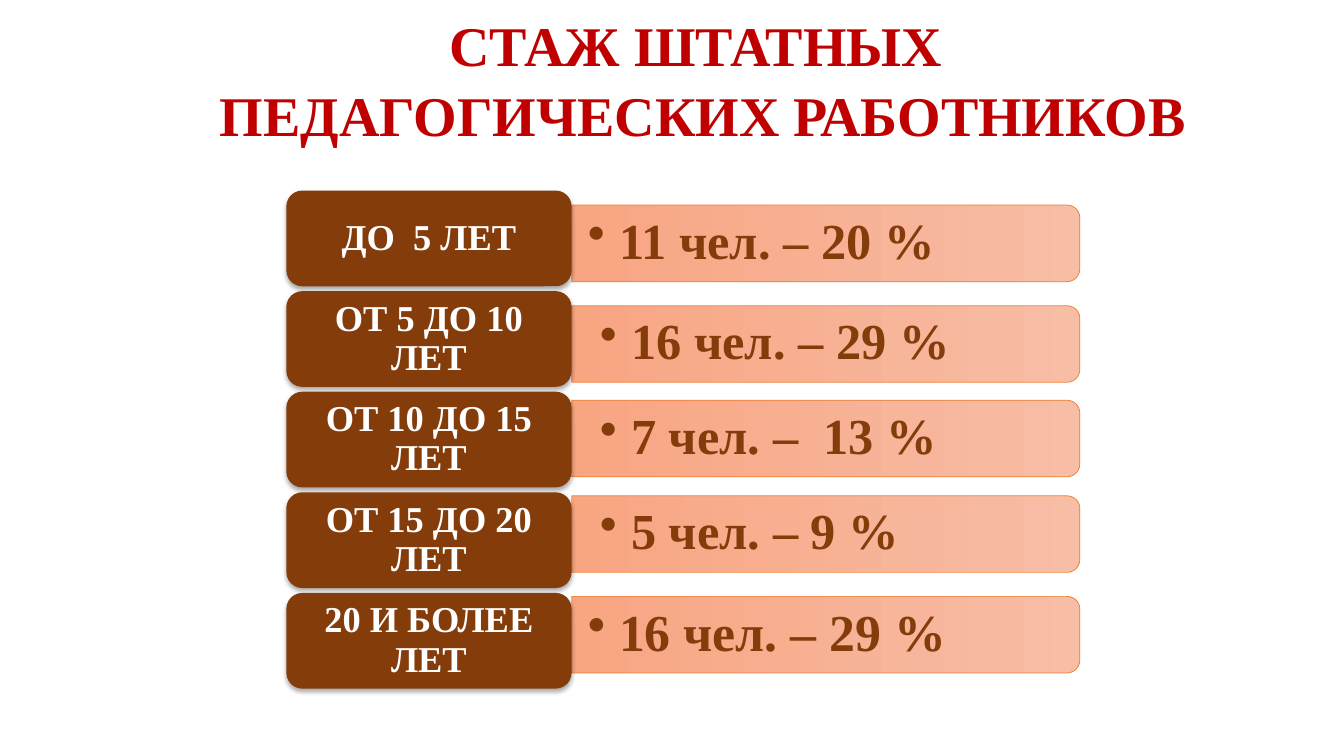
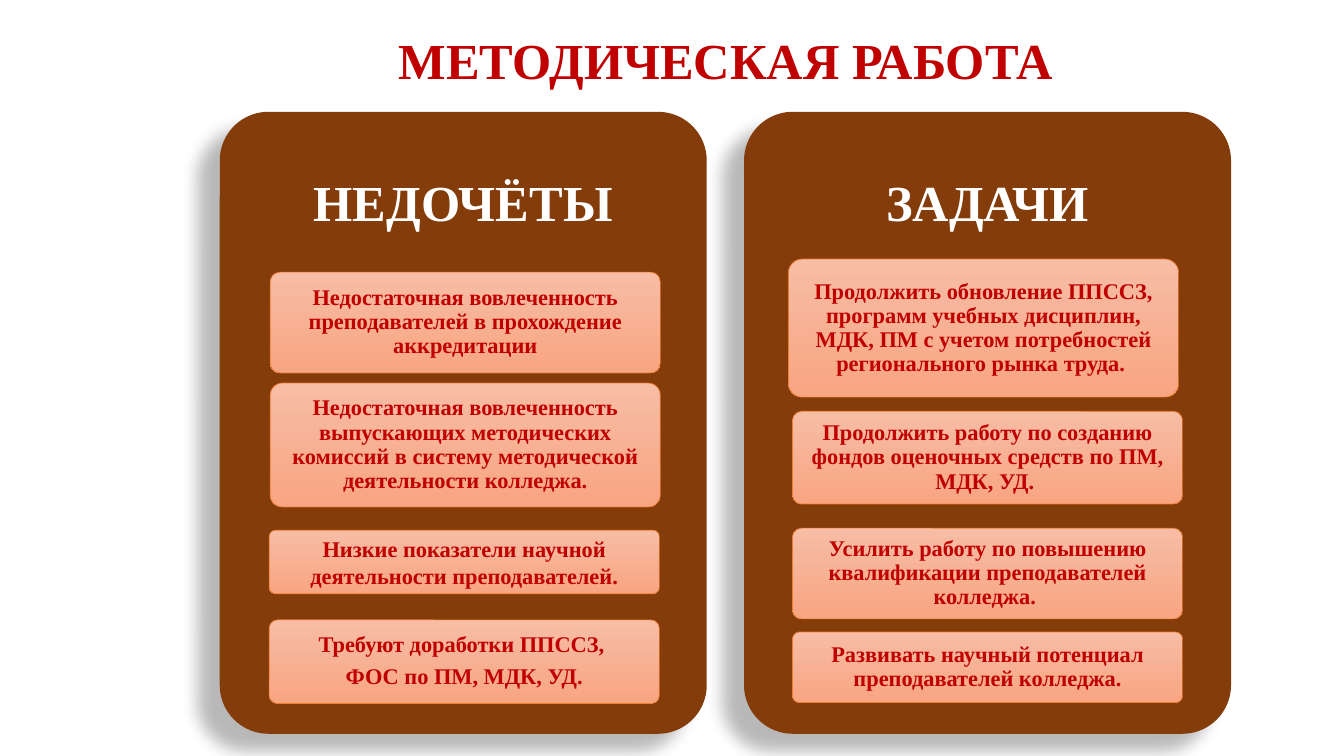
from dataclasses import dataclass
from typing import NamedTuple

from lxml.etree import SubElement
from pptx import Presentation
from pptx.dml.color import RGBColor
from pptx.enum.shapes import MSO_SHAPE
from pptx.enum.text import MSO_ANCHOR, MSO_AUTO_SIZE, PP_ALIGN
from pptx.oxml.ns import qn
from pptx.util import Inches, Pt

# Shared style
FONT = "Times New Roman"
RED, BROWN, WHITE = "C00000", "843C0B", "FFFFFF"
PALE, PEACH, EDGE = "F7BDA5", "F8A582", "ED7D31"


class Box(NamedTuple):
    """Place on a grid with ten cells to the inch."""
    col: float
    row: float
    cols: float
    rows: float


class Shade(NamedTuple):
    alpha: int
    blur: float
    dist: float
    angle: int


@dataclass
class Term:
    label: str
    value: str
    shift: float  # bar centre relative to pill centre
    inset: float = 2.7
    size: int = 36


@dataclass
class Card:
    row: float
    rows: float
    text: str
    shift: float = 0
    lead: float = 0.9


@dataclass
class Panel:
    col: float
    head: str
    cards: list[Card]


def cell(count: float) -> int:
    return Inches(count / 10)


def tint(code: str) -> RGBColor:
    return RGBColor.from_string(code)


# Text
def write(frame, text: str, *, size: float, color: str, align=PP_ALIGN.CENTER,
          anchor=MSO_ANCHOR.MIDDLE, lead: float = 0.9, gap: float = 0,
          inset: tuple[float, float] = (1, 0.5), bullet: float = 0) -> None:
    frame.word_wrap = True
    frame.auto_size = MSO_AUTO_SIZE.NONE
    frame.vertical_anchor = anchor
    frame.margin_left = frame.margin_right = cell(inset[0])
    frame.margin_top = frame.margin_bottom = cell(inset[1])
    frame.text = text
    for num, par in enumerate(frame.paragraphs):
        if bullet:
            props = par._p.get_or_add_pPr()
            props.set("marL", str(cell(bullet)))
            props.set("indent", str(-cell(bullet)))
            SubElement(props, qn("a:buChar"), char="•")
        par.alignment = align
        par.line_spacing = lead
        par.space_before = Pt(gap if num else 0)
        for run in par.runs:
            font = run.font
            font.name, font.size, font.bold = FONT, Pt(size), True
            font.color.rgb = tint(color)


def label(slide, box: Box, text: str, **style) -> None:
    note = slide.shapes.add_textbox(*map(cell, box))
    write(note.text_frame, text, **style)


def title(slide, box: Box, text: str, **style) -> None:
    head = slide.shapes.title
    head.left, head.top, head.width, head.height = map(cell, box)
    write(head.text_frame, text, color=RED, **style)


# Shapes
def block(slide, kind, box: Box, curve: float | None = None):
    shape = slide.shapes.add_shape(kind, *map(cell, box))
    shape.shadow.inherit = False
    if curve is not None:
        shape.adjustments[0] = curve
    return shape


def solid(slide, box: Box, shade: Shade, curve: float | None = None):
    shape = block(slide, MSO_SHAPE.ROUNDED_RECTANGLE, box, curve)
    shape.fill.solid()
    shape.fill.fore_color.rgb = tint(BROWN)
    shape.line.fill.background()
    glow = SubElement(shape._element.spPr.find(qn("a:effectLst")), qn("a:outerShdw"),
                      blurRad=str(Pt(shade.blur)), dist=str(Pt(shade.dist)),
                      dir=str(shade.angle * 60000), algn="ctr", rotWithShape="0")
    dark = SubElement(glow, qn("a:srgbClr"), val="000000")
    SubElement(dark, qn("a:alpha"), val=str(shade.alpha * 1000))
    return shape


def blend(slide, kind, box: Box, curve: float | None = None):
    shape = block(slide, kind, box, curve)
    shape.fill.gradient()
    shape.fill.gradient_angle = 270
    for stop, code in zip(shape.fill.gradient_stops, (PALE, PEACH)):
        stop.color.rgb = tint(code)
    shape.line.color.rgb = tint(EDGE)
    shape.line.width = Pt(0.5)
    return shape


# Slide 1: length of service
TERMS = [
    Term("ДО  5 ЛЕТ", "11 чел. – 20 %", 0.5, inset=1.5),
    Term("ОТ 5 ДО 10 ЛЕТ", "16 чел. – 29 %", 0.5),
    Term("ОТ 10 ДО 15 ЛЕТ", "7 чел. –  13 %", -0.1),
    Term("ОТ 15 ДО 20 ЛЕТ", "5 чел. – 9 %", -0.6),
    Term("20 И БОЛЕЕ ЛЕТ", "16 чел. – 29 %", -0.6, inset=1.5, size=37),
]
PILL = Box(28.4, 18.9, 28.3, 9.5)
STEP, LONG, THICK = 9.98, 50.4, 7.6


def draw_term(slide, num: int, term: Term) -> None:
    pill = PILL._replace(row=PILL.row + num * STEP)
    left = pill.col + pill.cols
    mid = pill.row + pill.rows / 2 + term.shift
    # The bar stands upright and is turned, so its round end points right
    bar = blend(slide, MSO_SHAPE.ROUND_2_SAME_RECTANGLE,
                Box(left + (LONG - THICK) / 2, mid - LONG / 2, THICK, LONG))
    bar.rotation = 90
    label(slide, Box(left + 0.1, mid - 3.5, 50, 6.9), term.value, size=term.size,
          color=BROWN, align=PP_ALIGN.LEFT, bullet=3.1,
          inset=(term.inset, term.inset / 2))
    shape = solid(slide, pill, Shade(32, 3.5, 2.2, 90))
    write(shape.text_frame, term.label, size=26, color=WHITE, inset=(1.1, 0.5))


def staff(slide) -> None:
    title(slide, Box(9.7, 0.2, 120, 14.5), "СТАЖ ШТАТНЫХ \vПЕДАГОГИЧЕСКИХ РАБОТНИКОВ",
          size=40, anchor=MSO_ANCHOR.TOP, lead=1.05)
    for num, term in enumerate(TERMS):
        draw_term(slide, num, term)


# Slide 2: shortcomings and tasks
PANELS = [
    Panel(21.8, "НЕДОЧЁТЫ", [
        Card(27, 10, "Недостаточная вовлеченность преподавателей в прохождение "
             "аккредитации", 0.2),
        Card(38, 12.3, "Недостаточная вовлеченность выпускающих методических комиссий "
             "в систему методической деятельности колледжа.", 0.2),
        Card(52.6, 6.3, "Низкие показатели научной деятельности преподавателей.",
             0.1, lead=1),
        Card(61.5, 8.3, "Требуют доработки ППССЗ, \nФОС по ПМ, МДК, УД.", 0.1),
    ]),
    Panel(73.8, "ЗАДАЧИ", [
        Card(25.7, 13.7, "Продолжить обновление ППССЗ, программ учебных дисциплин, "
             "МДК, ПМ с учетом потребностей регионального рынка труда. ", -0.4),
        Card(40.8, 9.2, "Продолжить работу по созданию фондов оценочных средств "
             "по ПМ, МДК, УД. "),
        Card(52.4, 9, "Усилить работу по повышению квалификации преподавателей "
             "колледжа. "),
        Card(62.7, 7, "Развивать научный потенциал преподавателей колледжа."),
    ]),
]
TOP, WIDE, TALL, INNER = 11.1, 48.3, 61.7, 38.7


def draw_panel(slide, panel: Panel) -> None:
    solid(slide, Box(panel.col, TOP, WIDE, TALL), Shade(28, 11.8, 19.7, 141), 0.1)
    label(slide, Box(panel.col, TOP, WIDE, 0.3 * TALL), panel.head, size=36,
          color=WHITE, inset=(1.5, 1.5))
    left = panel.col + (WIDE - INNER) / 2
    for card in panel.cards:
        shape = blend(slide, MSO_SHAPE.ROUNDED_RECTANGLE,
                      Box(left + card.shift, card.row, INNER, card.rows), 0.1)
        write(shape.text_frame, card.text, size=16, color=RED, lead=card.lead,
              gap=5.6, inset=(0.4, 0.3))


def method(slide) -> None:
    title(slide, Box(14.5, -1, 115, 14.5), "МЕТОДИЧЕСКАЯ РАБОТА", size=36)
    for panel in PANELS:
        draw_panel(slide, panel)


def main() -> None:
    deck = Presentation()
    deck.slide_width, deck.slide_height = Inches(13.33), Inches(7.5)
    plain = deck.slide_layouts[5]
    for draw in (staff, method):
        draw(deck.slides.add_slide(plain))
    deck.save("out.pptx")


if __name__ == "__main__":
    main()
